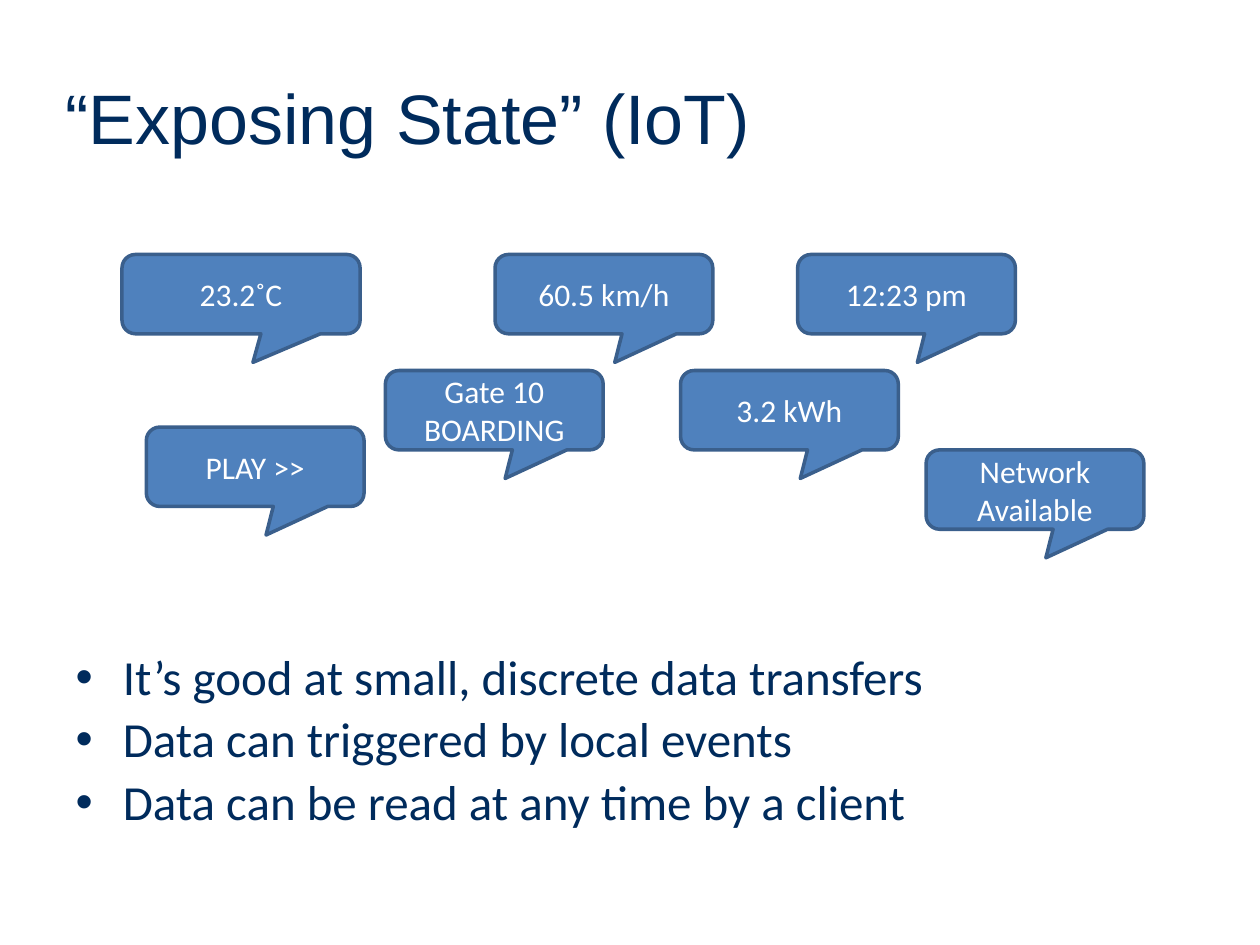
from pptx import Presentation
from pptx.dml.color import RGBColor
from pptx.enum import shapes, text
from pptx.util import Cm, Pt

HUES = {"navy": "002B5C", "blue": "4F81BD", "edge": "3A5F8C", "white": "FFFFFF"}
POINTS = [
    "It’s good at small, discrete data transfers",
    "Data can triggered by local events",
    "Data can be read at any time by a client",
]
WIDTH = 4.39
# Words, left, top, width of each bubble in cm
BUBBLES = [
    ("23.2˚C", 2.46, 5.13, 4.8),
    ("Gate 10 BOARDING", 7.77, 7.47, WIDTH),
    ("12:23 pm", 16.08, 5.13, WIDTH),
    ("60.5 km/h", 9.98, 5.13, WIDTH),
    ("3.2 kWh", 13.72, 7.47, WIDTH),
    ("PLAY >>", 2.95, 8.61, WIDTH),
    ("Network Available", 18.67, 9.07, WIDTH),
]


def tint(name):
    return RGBColor.from_string(HUES[name])


class Page:
    """Holds the style and the current slide."""

    head, face = "Arial", "Calibri"

    def __init__(self, deck):
        self.slide = deck.slides.add_slide(deck.slide_layouts[1])

    def place(self, item, *box):
        item.left, item.top, item.width, item.height = map(Cm, box)

    def style(self, para, face, size, hue):
        for run in para.runs:
            run.font.name = face
            run.font.size = Pt(size)
            run.font.color.rgb = tint(hue)

    def title(self, words, *box):
        item = self.slide.shapes.title
        self.place(item, *box)
        frame = item.text_frame
        frame.text = words
        frame.auto_size = text.MSO_AUTO_SIZE.NONE
        frame.vertical_anchor = text.MSO_ANCHOR.MIDDLE
        frame.paragraphs[0].alignment = text.PP_ALIGN.LEFT
        self.style(frame.paragraphs[0], self.head, 40, "navy")

    def list(self, lines, *box):
        item = self.slide.placeholders[1]
        self.place(item, *box)
        frame = item.text_frame
        frame.text = "\n".join(lines)
        frame.auto_size = text.MSO_AUTO_SIZE.NONE
        for i, para in enumerate(frame.paragraphs):
            para.line_spacing = 0.9
            para.space_before = Pt(5.6 if i else 0)
            self.style(para, self.face, 28, "navy")

    def bubble(self, words, left, top, width):
        item = self.slide.shapes.add_shape(
            shapes.MSO_SHAPE.ROUNDED_RECTANGULAR_CALLOUT,
            Cm(left), Cm(top), Cm(width), Cm(1.6))
        for i, value in enumerate((0.05, 0.86, 0.17)):
            item.adjustments[i] = value
        item.shadow.inherit = False
        item.fill.solid()
        item.fill.fore_color.rgb = tint("blue")
        item.line.color.rgb = tint("edge")
        item.line.width = Pt(2)
        frame = item.text_frame
        frame.text = words
        frame.word_wrap = True
        frame.vertical_anchor = text.MSO_ANCHOR.MIDDLE
        frame.paragraphs[0].alignment = text.PP_ALIGN.CENTER
        self.style(frame.paragraphs[0], self.face, 18, "white")


def main():
    deck = Presentation()
    deck.slide_width, deck.slide_height = Cm(25.4), Cm(19.05)
    page = Page(deck)
    page.title("“Exposing State” (IoT)", 1.07, 1.07, 23.06, 2.54)
    page.list(POINTS, 1.27, 13.03, 22.86, 4.98)
    for bubble in BUBBLES:
        page.bubble(*bubble)
    deck.save("out.pptx")


if __name__ == "__main__":
    main()
